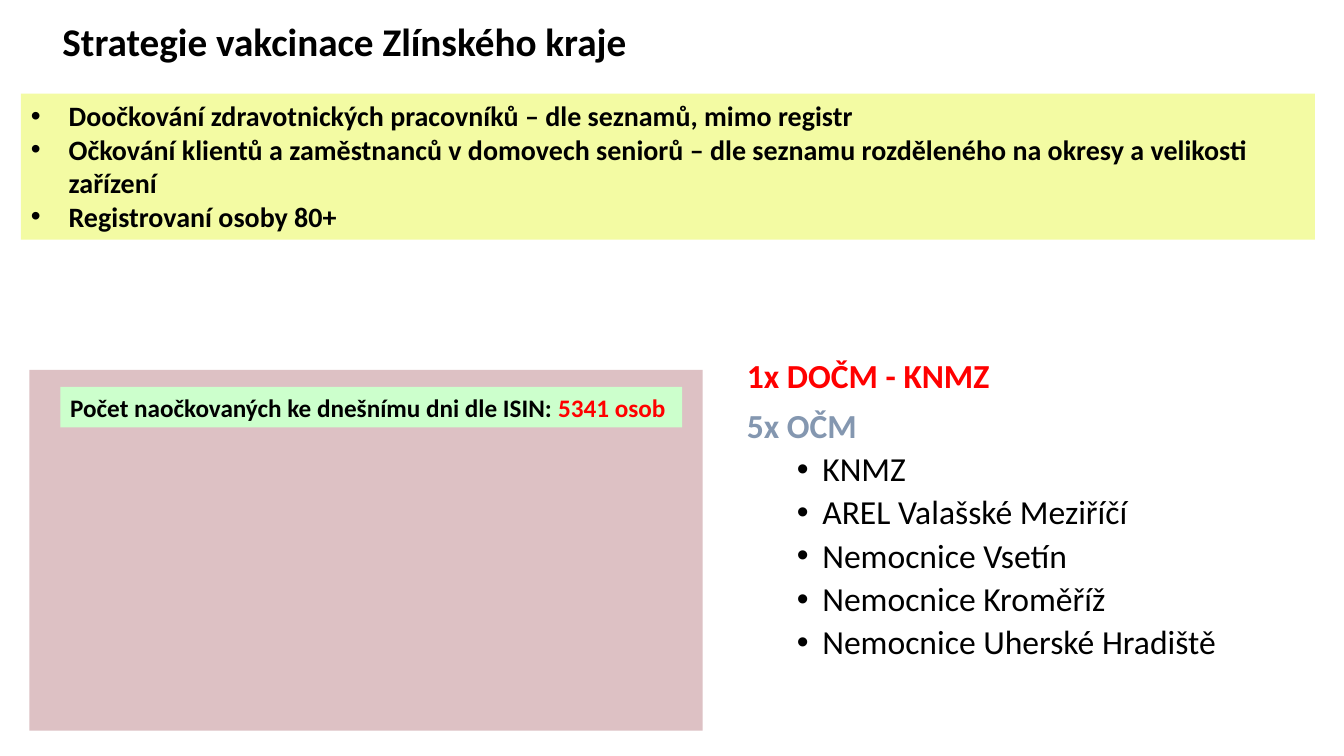
import pptx
import pptx.util
import pptx.dml.color
import pptx.enum.shapes
import pptx.enum.text
import pptx.oxml.ns
import lxml.etree

Cm = pptx.util.Cm
Pt = pptx.util.Pt
RGB = pptx.dml.color.RGBColor
TEXT = pptx.enum.text

BLACK = RGB(0x00, 0x00, 0x00)
RED = RGB(0xFF, 0x00, 0x00)
SLATE = RGB(0x84, 0x97, 0xB0)
PINK = RGB(0xDD, 0xC1, 0xC4)
LIME = RGB(0xF3, 0xFB, 0xA3)
MINT = RGB(0xCC, 0xFF, 0xCC)

TITLE = "Strategie vakcinace Zlínského kraje"
GOALS = [
    "Doočkování zdravotnických pracovníků – dle seznamů, mimo registr",
    "Očkování klientů a zaměstnanců v domovech seniorů – dle seznamu rozděleného na okresy a velikosti zařízení",
    "Registrovaní osoby 80+",
]
COUNT = [
    ("Počet naočkovaných ke dnešnímu dni dle ISIN: ", BLACK),
    ("5341 osob", RED),
]
SITES = [
    ("1x DOČM - KNMZ", 0, RED),
    ("5x OČM", 0, SLATE),
    ("KNMZ", 1, BLACK),
    ("AREL Valašské Meziříčí", 1, BLACK),
    ("Nemocnice Vsetín", 1, BLACK),
    ("Nemocnice Kroměříž", 1, BLACK),
    ("Nemocnice Uherské Hradiště", 1, BLACK),
]


def style(run, size, color, bold=True):
    font = run.font
    font.name = "Calibri"
    font.size = Pt(size)
    font.bold = bold
    font.color.rgb = color


def indent(para, left, hang, mark):
    props = para._p.get_or_add_pPr()
    props.set("marL", str(Cm(left)))
    props.set("indent", str(Cm(-hang)))
    qn = pptx.oxml.ns.qn
    if mark:
        face = lxml.etree.SubElement(props, qn("a:buFont"))
        face.set("typeface", "Arial")
        dot = lxml.etree.SubElement(props, qn("a:buChar"))
        dot.set("char", "•")
    else:
        lxml.etree.SubElement(props, qn("a:buNone"))


def place(shape, box):
    shape.left, shape.top, shape.width, shape.height = map(Cm, box)


def setup(shape):
    frame = shape.text_frame
    frame.word_wrap = True
    frame.auto_size = TEXT.MSO_AUTO_SIZE.NONE
    frame.vertical_anchor = TEXT.MSO_ANCHOR.TOP
    return frame


def panel(slide, box, color):
    kind = pptx.enum.shapes.MSO_SHAPE.RECTANGLE
    shape = slide.shapes.add_shape(kind, *map(Cm, box))
    shape.shadow.inherit = False
    shape.fill.solid()
    shape.fill.fore_color.rgb = color
    shape.line.fill.background()
    return shape


def main():
    deck = pptx.Presentation()
    deck.slide_width = Cm(33.87)
    deck.slide_height = Cm(19.05)
    slide = deck.slides.add_slide(deck.slide_layouts[1])
    left = TEXT.PP_ALIGN.LEFT

    title = slide.shapes.title
    place(title, (1.32, 0.3, 22.56, 1.45))
    frame = setup(title)
    frame.text = TITLE
    frame.paragraphs[0].alignment = left
    style(frame.paragraphs[0].runs[0], 28, BLACK)

    body = slide.placeholders[1]
    place(body, (18.57, 8.92, 15.3, 9.09))
    frame = setup(body)
    frame.text = "\n".join(text for text, level, color in SITES)
    for para, (text, level, color) in zip(frame.paragraphs, SITES):
        para.level = level
        para.line_spacing = 0.9
        para.space_before = Pt(5 if level else 10)
        indent(para, 1.9 * level, 0.64 * level, level)
        style(para.runs[0], 24, color, not level)

    panel(slide, (0.74, 9.32, 16.97, 9.09), PINK)

    frame = setup(panel(slide, (0.53, 2.36, 32.61, 3.68), LIME))
    frame.text = "\n".join(GOALS)
    for para in frame.paragraphs:
        para.alignment = left
        indent(para, 0.95, 0.95, True)
        style(para.runs[0], 20, BLACK)

    frame = setup(panel(slide, (1.52, 9.75, 15.67, 1.02), MINT))
    para = frame.paragraphs[0]
    para.alignment = left
    for text, color in COUNT:
        run = para.add_run()
        run.text = text
        style(run, 18, color)

    deck.save("out.pptx")


if __name__ == "__main__":
    main()
